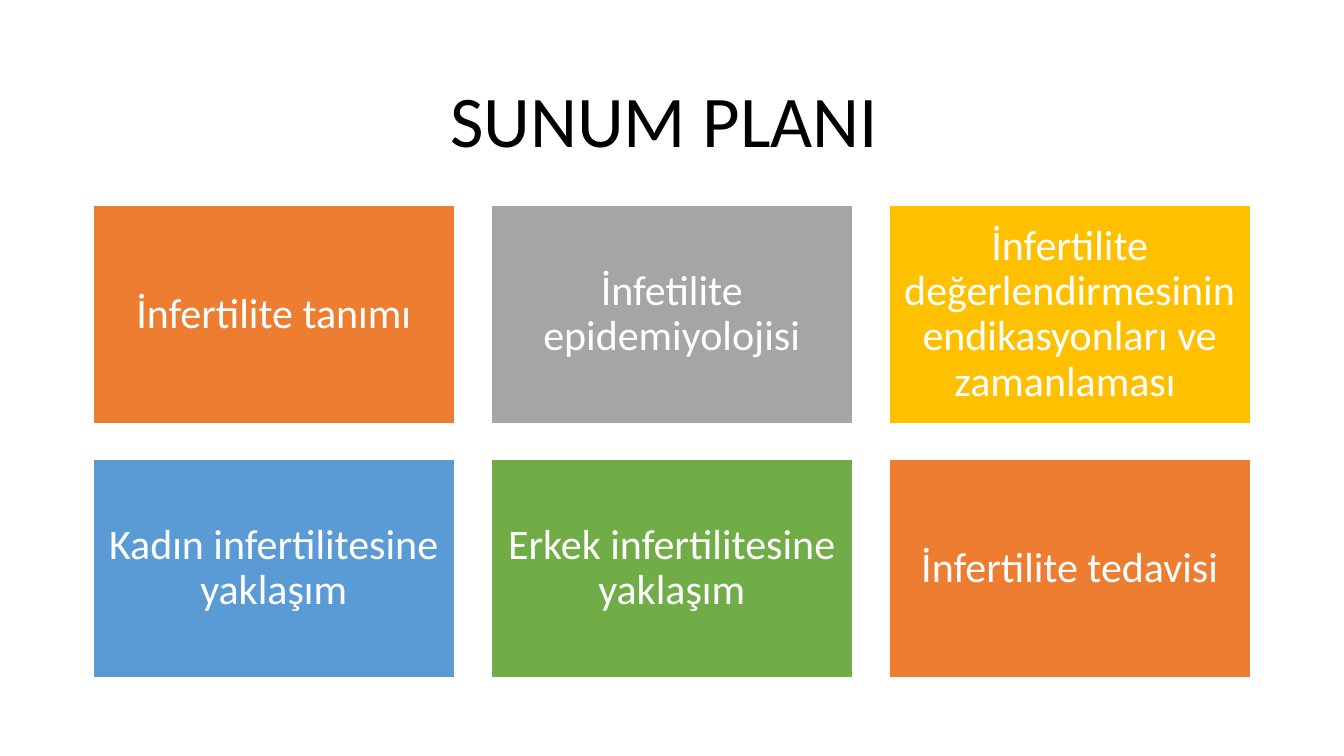
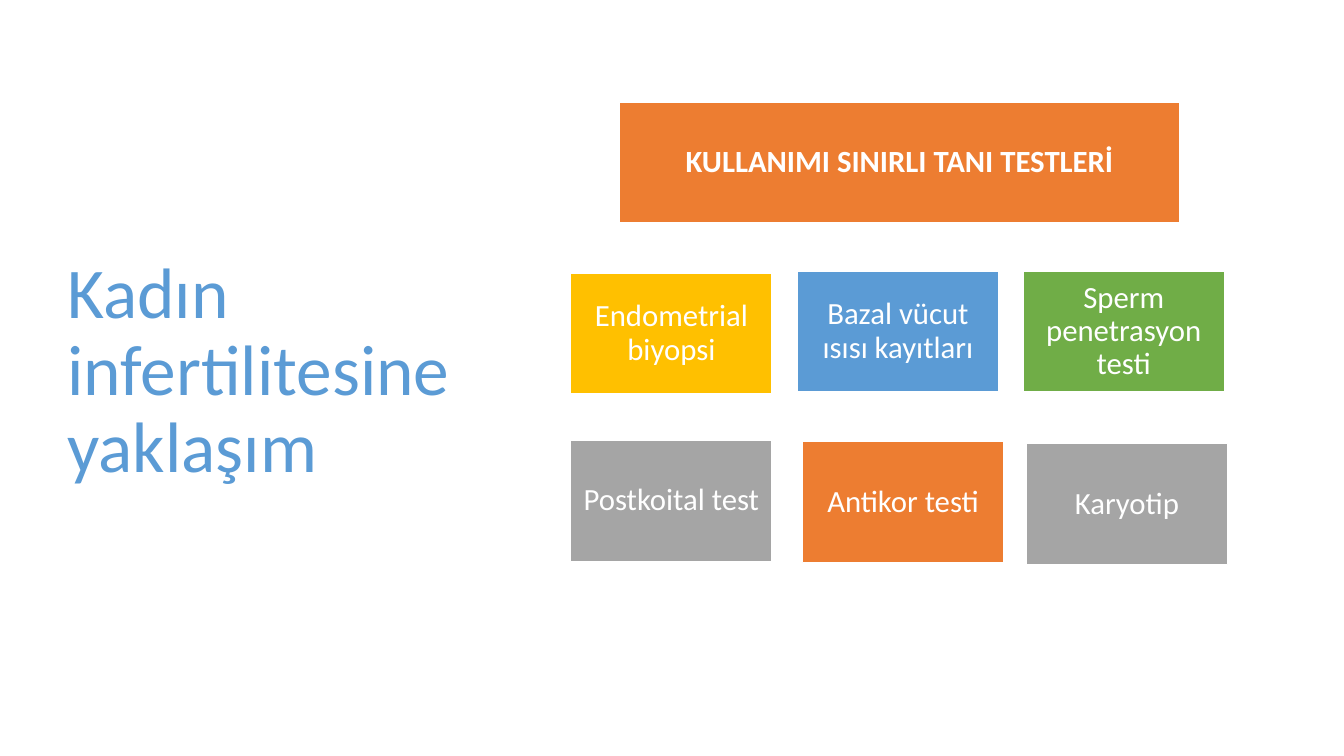
from dataclasses import dataclass

from pptx import Presentation
from pptx.dml.color import RGBColor
from pptx.enum.shapes import MSO_SHAPE as Form
from pptx.enum.text import MSO_ANCHOR as Anchor, PP_ALIGN as Align
from pptx.slide import Slide
from pptx.text.text import TextFrame
from pptx.util import Cm, Pt

FONT = "Calibri"
HUES = {
    "black": "000000",
    "white": "FFFFFF",
    "orange": "ED7D31",
    "gray": "A5A5A5",
    "gold": "FFC000",
    "blue": "5B9BD5",
    "green": "70AD47",
}


@dataclass(frozen=True)
class Box:
    """A place on the slide, in centimetres."""
    left: float
    top: float
    width: float
    height: float

    def emu(self) -> tuple[Cm, Cm, Cm, Cm]:
        return Cm(self.left), Cm(self.top), Cm(self.width), Cm(self.height)


@dataclass(frozen=True)
class Style:
    size: int
    hue: str = "white"
    align: Align = Align.CENTER
    bold: bool = False
    inset: float = 0.25


@dataclass(frozen=True)
class Tile:
    text: str
    fill: str
    box: Box
    style: Style


def color(name: str) -> RGBColor:
    return RGBColor.from_string(HUES[name])


def write(frame: TextFrame, text: str, style: Style) -> None:
    frame.word_wrap = True
    frame.vertical_anchor = Anchor.MIDDLE
    frame.margin_left = frame.margin_right = Cm(style.inset)
    frame.margin_top = frame.margin_bottom = Cm(style.inset)
    para = frame.paragraphs[0]
    para.alignment = style.align
    para.line_spacing = 0.9
    run = para.add_run()
    run.text = text
    run.font.name = FONT
    run.font.size = Pt(style.size)
    run.font.bold = style.bold
    run.font.color.rgb = color(style.hue)


def add_title(slide: Slide, text: str, box: Box, style: Style) -> None:
    write(slide.shapes.add_textbox(*box.emu()).text_frame, text, style)


def add_tile(slide: Slide, tile: Tile) -> None:
    shape = slide.shapes.add_shape(Form.RECTANGLE, *tile.box.emu())
    shape.shadow.inherit = False
    shape.fill.solid()
    shape.fill.fore_color.rgb = color(tile.fill)
    shape.line.color.rgb = color("white")
    shape.line.width = Pt(1)
    write(shape.text_frame, tile.text, tile.style)


def add_plan(slide: Slide) -> None:
    """Outline of the talk: an even grid of three columns."""
    add_title(slide, "SUNUM PLANI ", Box(2.34, 1.55, 29.21, 3.15),
              Style(52, "black"))
    topics = [
        ("İnfertilite tanımı", "orange"),
        ("İnfetilite epidemiyolojisi", "gray"),
        ("İnfertilite değerlendirmesinin endikasyonları ve zamanlaması ", "gold"),
        ("Kadın infertilitesine yaklaşım", "blue"),
        ("Erkek infertilitesine yaklaşım", "green"),
        ("İnfertilite tedavisi", "orange"),
    ]
    wide, high, gap = 9.12, 5.49, 0.91
    style = Style(30, inset=0.3)
    for i, (text, fill) in enumerate(topics):
        row, col = divmod(i, 3)
        box = Box(2.34 + col * (wide + gap), 5.18 + row * (high + gap), wide, high)
        add_tile(slide, Tile(text, fill, box, style))


def add_tests(slide: Slide) -> None:
    """Tests of limited use: a header above six loosely set tiles."""
    add_title(slide, "Kadın infertilitesine yaklaşım",
              Box(1.45, 1.73, 10.57, 15.29), Style(51, "blue", Align.LEFT))
    high = 3.05
    add_tile(slide, Tile("KULLANIMI SINIRLI TANI TESTLERİ", "orange",
                         Box(15.62, 2.57, 14.1, high),
                         Style(22, bold=True, inset=0.23)))
    tests = [
        ("Endometrial biyopsi", "gold", 14.38, 6.88),
        ("Bazal vücut ısısı kayıtları", "blue", 20.09, 6.83),
        ("Sperm penetrasyon testi", "green", 25.78, 6.83),
        ("Postkoital test", "gray", 14.38, 11.1),
        ("Antikor testi", "orange", 20.22, 11.13),
        ("Karyotip", "gray", 25.86, 11.18),
    ]
    style = Style(22, inset=0.23)
    for text, fill, left, top in tests:
        add_tile(slide, Tile(text, fill, Box(left, top, 5.08, high), style))


def main() -> None:
    deck = Presentation()
    deck.slide_width, deck.slide_height = Cm(33.87), Cm(19.05)
    blank = deck.slide_layouts[6]
    for build in (add_plan, add_tests):
        build(deck.slides.add_slide(blank))
    deck.save("out.pptx")


if __name__ == "__main__":
    main()
